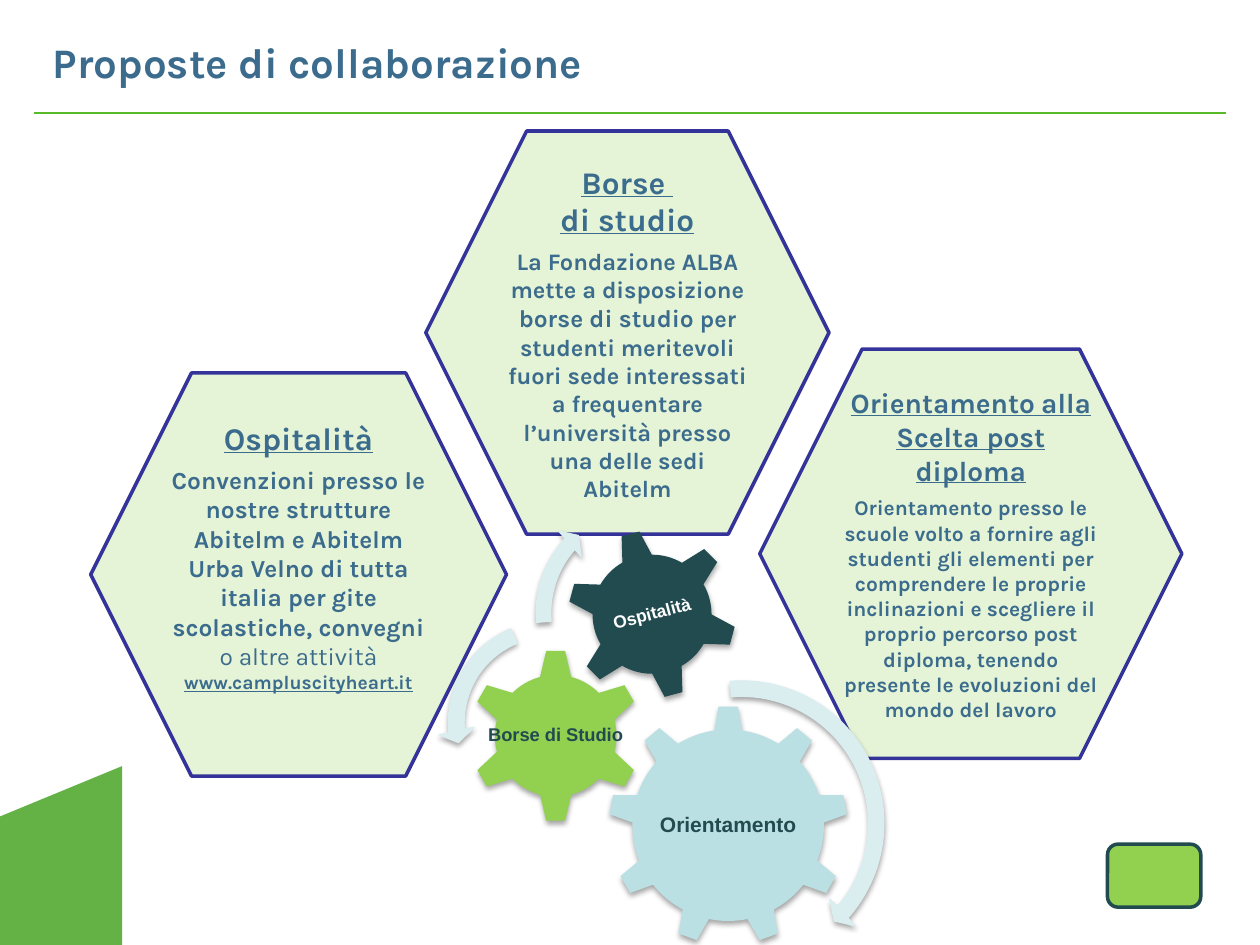
from lxml import etree
from pptx import Presentation
from pptx.dml.color import RGBColor
from pptx.enum.shapes import MSO_CONNECTOR, MSO_SHAPE
from pptx.enum.text import MSO_ANCHOR, PP_ALIGN
from pptx.oxml.ns import qn
from pptx.util import Inches, Pt

HEXAGON = MSO_SHAPE.HEXAGON
GEAR_SIX, GEAR_NINE = MSO_SHAPE.GEAR_6, MSO_SHAPE.GEAR_9
ARROW_RIGHT, ARROW_LEFT = MSO_SHAPE.CIRCULAR_ARROW, MSO_SHAPE.LEFT_CIRCULAR_ARROW
ROUNDED = MSO_SHAPE.ROUNDED_RECTANGLE
LEFT, CENTER, MIDDLE = PP_ALIGN.LEFT, PP_ALIGN.CENTER, MSO_ANCHOR.MIDDLE

THEME = {
    "text": RGBColor.from_string("3C6C8D"),
    "rule": RGBColor.from_string("57BA26"),
    "corner": RGBColor.from_string("64B145"),
    "outline": RGBColor.from_string("333399"),
    "lime": RGBColor.from_string("92D050"),
    "dark": RGBColor.from_string("224B50"),
    "pale": RGBColor.from_string("BBE0E3"),
    "arrow": RGBColor.from_string("DAEDEF"),
    "white": RGBColor.from_string("FFFFFF"),
    "body_font": "Karla",
    "gear_font": "Arial",
    "title_size": 24,
    "heading_size": 18,
    "small_heading_size": 16,
    "body_size": 14,
    "tight_body_size": 13.5,
    "small_body_size": 12,
    "address_size": 11,
    "gear_sizes": {"large": 12, "medium": 10.5, "small": 10},
}


def add_run(paragraph, text, color, **format_values):
    run = paragraph.add_run()
    run.text = text
    run.font.color.rgb = color
    for name, value in format_values.items():
        setattr(run.font, name, value)


def add_filled_shape(kind, box, fill, line=None, line_width=0.75, shadow=False):
    shape = slide.shapes.add_shape(kind, *map(Inches, box))
    shape.shadow.inherit = False
    shape.fill.solid()
    shape.fill.fore_color.rgb = fill
    if line is None:
        shape.line.fill.background()
    else:
        shape.line.color.rgb = line
        shape.line.width = Pt(line_width)
    if shadow:
        effects = shape._element.spPr.find(qn("a:effectLst"))
        outer = etree.SubElement(effects, qn("a:outerShdw"), blurRad=str(Pt(3.1)),
                                 dist=str(Pt(1.8)), dir="5400000", rotWithShape="0")
        black = etree.SubElement(outer, qn("a:srgbClr"), val="000000")
        etree.SubElement(black, qn("a:alpha"), val="35000")
    return shape


presentation = Presentation()
presentation.slide_width, presentation.slide_height = Inches(10), Inches(7.5)
slide = presentation.slides.add_slide(presentation.slide_layouts[5])

# Corner, title and rule
builder = slide.shapes.build_freeform(Inches(0.97), Inches(6.08))
builder.add_line_segments([(Inches(x), Inches(y)) for x, y in
                           [(0, 6.48), (0, 7.5), (0.97, 7.5)]])
corner = builder.convert_to_shape()
corner.shadow.inherit = False
corner.fill.solid()
corner.fill.fore_color.rgb = THEME["corner"]
corner.line.fill.background()

title = slide.shapes.title
title.left, title.top, title.width, title.height = map(Inches, (0.32, 0.13, 9.4, 0.72))
title.text_frame.vertical_anchor = MIDDLE
title_paragraph = title.text_frame.paragraphs[0]
title_paragraph.alignment = LEFT
add_run(title_paragraph, "Proposte di collaborazione", THEME["text"],
        name=THEME["body_font"], size=Pt(THEME["title_size"]), bold=True)

rule = slide.shapes.add_connector(MSO_CONNECTOR.STRAIGHT, Inches(0.27), Inches(0.9),
                                  Inches(9.73), Inches(0.9))
rule.line.color.rgb = THEME["rule"]
rule.line.width = Pt(1.25)
etree.SubElement(rule._element.spPr, qn("a:effectLst"))

# Hexagons: box, bottom margin, paragraphs of (space before, runs)
HEADING = {"size": Pt(THEME["heading_size"]), "bold": True, "underline": True}
SMALL_HEADING = {**HEADING, "size": Pt(THEME["small_heading_size"])}
BODY = {"size": Pt(THEME["body_size"]), "bold": True}
LIGHT_BODY = {**BODY, "bold": False}
TIGHT_BODY = {**BODY, "size": Pt(THEME["tight_body_size"])}
SMALL_BODY = {**BODY, "size": Pt(THEME["small_body_size"])}
ADDRESS = {**HEADING, "size": Pt(THEME["address_size"])}
BODY_GAP = 4.7

proposals = [
    ((0.72, 2.96, 3.3, 3.2), 0.34, [
        (0, [("Ospitalità", HEADING)]),
        (BODY_GAP, [("Convenzioni presso le nostre strutture Abitelm e Abitelm Urba Velno "
                     "di tutta italia per gite scolastiche, convegni ", BODY),
                    ("o altre attività", LIGHT_BODY)]),
        (0, [("www.campluscityheart.it", ADDRESS)]),
    ]),
    ((3.38, 1.04, 3.2, 3.2), 0.05, [
        (0, [("Borse ", HEADING)]),
        (0, [("di studio", HEADING)]),
        (BODY_GAP, [("La Fondazione ALBA mette a disposizione ", TIGHT_BODY),
                    ("borse di studio", BODY),
                    (" per studenti meritevoli fuori sede interessati a frequentare "
                     "l’università presso una delle sedi Abitelm", TIGHT_BODY)]),
    ]),
    ((6.03, 2.77, 3.35, 3.25), 0.05, [
        (0, [("Orientamento", SMALL_HEADING),
             (" ", {**HEADING, "size": Pt(THEME["body_size"])}),
             ("alla Scelta post diploma", SMALL_HEADING)]),
        (BODY_GAP, [("Orientamento presso le scuole volto a fornire agli studenti gli elementi "
                     "per comprendere le proprie inclinazioni e scegliere il proprio percorso "
                     "post diploma, tenendo presente le evoluzioni del mondo del lavoro",
                     SMALL_BODY)]),
    ]),
]
for box, bottom_margin, paragraphs in proposals:
    hexagon = add_filled_shape(HEXAGON, box, THEME["lime"], THEME["outline"], 2)
    hexagon.adjustments[0] = 0.25
    fill_color = hexagon._element.spPr.find(qn("a:solidFill"))[0]
    etree.SubElement(fill_color, qn("a:alpha"), val="23000")
    frame = hexagon.text_frame
    frame.word_wrap = True
    frame.vertical_anchor = MIDDLE
    frame.margin_bottom = Inches(bottom_margin)
    for index, (space_before, runs) in enumerate(paragraphs):
        paragraph = frame.add_paragraph() if index else frame.paragraphs[0]
        paragraph.alignment = CENTER
        if space_before:
            paragraph.space_before = Pt(space_before)
        for text, format_values in runs:
            add_run(paragraph, text, THEME["text"], name=THEME["body_font"], **format_values)

# Gears: kind, left, top, side, label inset, rotation, fill, label, label colour, size
gears = [
    (GEAR_NINE, 4.83, 5.6, 1.9, 0, 0, "pale", "Orientamento", "dark", "large"),
    (GEAR_SIX, 3.72, 5.15, 1.38, 0, 0, "lime", "Borse di Studio", "dark", "medium"),
    (GEAR_SIX, 4.5, 4.2, 1.35, 0.29, 345, "dark", "Ospitalità", "white", "small"),
]
for kind, left, top, side, inset, rotation, fill, label, color, size in gears:
    gear = add_filled_shape(kind, (left, top, side, side), THEME[fill], shadow=True)
    gear.rotation = rotation
    label_side = side - 2 * inset
    label_box = slide.shapes.add_textbox(
        *map(Inches, (left + inset, top + inset, label_side, label_side)))
    label_box.rotation = rotation
    frame = label_box.text_frame
    frame.word_wrap = True
    frame.vertical_anchor = MIDDLE
    for edge in ("left", "top", "right", "bottom"):
        setattr(frame, f"margin_{edge}", Inches(0.02))
    paragraph = frame.paragraphs[0]
    paragraph.alignment = CENTER
    paragraph.line_spacing = 0.9
    add_run(paragraph, label, THEME[color], name=THEME["gear_font"],
            size=Pt(THEME["gear_sizes"][size]), bold=True)

# Turning arrows: kind, left, top, side, adjustments
arrows = [
    (ARROW_RIGHT, 4.67, 5.32, 2.43, (0.05, 2.99, 24.85, 159.3, 0.06)),
    (ARROW_LEFT, 3.48, 4.85, 1.77, (0.07, 4.3, 104.89, 148.38, 0.08)),
    (ARROW_RIGHT, 4.18, 3.91, 1.91, (0.06, 3.94, 133.14, 105.08, 0.07)),
]
for kind, left, top, side, adjustments in arrows:
    arrow = add_filled_shape(kind, (left, top, side, side), THEME["arrow"],
                             THEME["arrow"], shadow=True)
    for index, value in enumerate(adjustments):
        arrow.adjustments[index] = value

# Plain emblem in the corner
add_filled_shape(ROUNDED, (8.79, 6.7, 0.74, 0.5), THEME["lime"], THEME["dark"], 2)

presentation.save("out.pptx")
